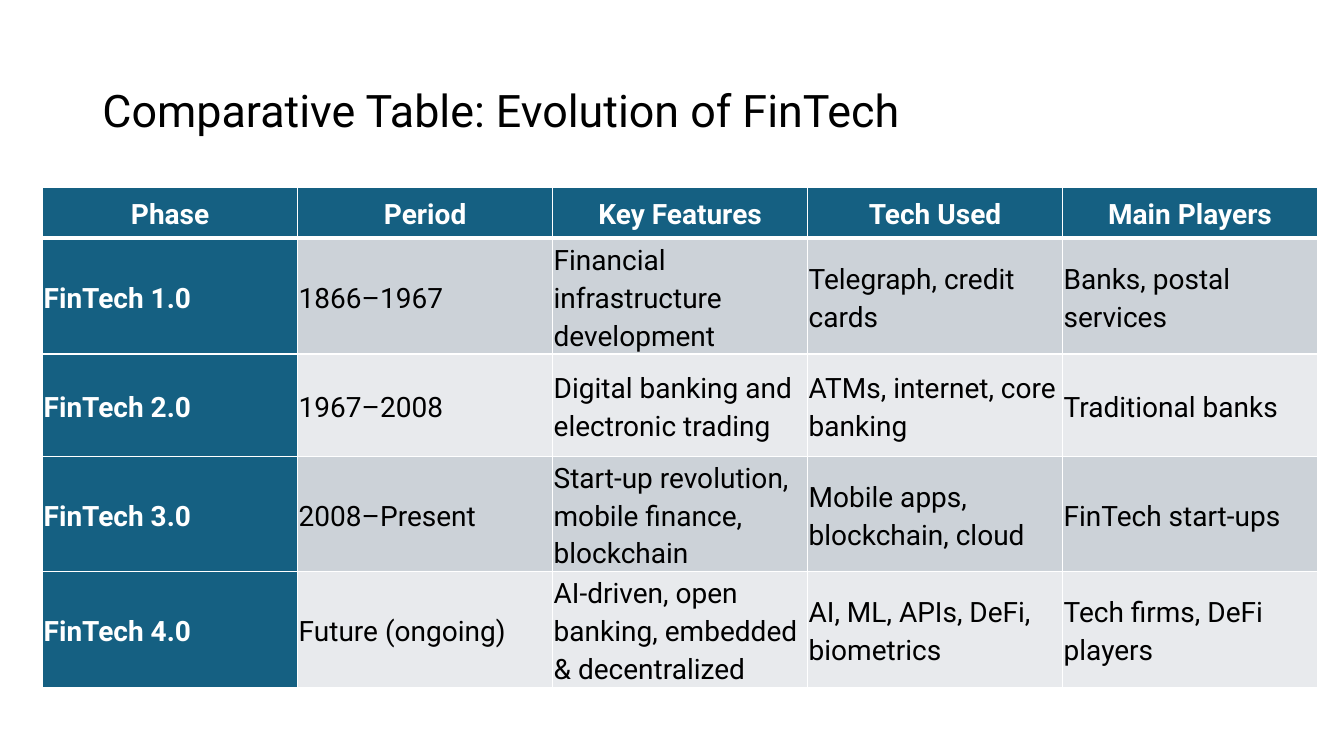
from dataclasses import dataclass

from lxml.etree import SubElement
from pptx import Presentation
from pptx.dml.color import RGBColor
from pptx.enum.text import MSO_ANCHOR, MSO_AUTO_SIZE, PP_ALIGN
from pptx.oxml.ns import qn
from pptx.util import Pt


@dataclass(frozen=True)
class Theme:
    font: str = "Roboto"
    title_size: int = 32
    table_size: int = 20
    black: str = "000000"
    white: str = "FFFFFF"
    accent: str = "156082"
    bands: tuple = ("CCD2D8", "E8EAED")


theme = Theme()


def style_paragraph(paragraph, size, color, bold, alignment, line_spacing):
    paragraph.font.name = theme.font
    paragraph.font.size = Pt(size)
    paragraph.font.bold = bold
    paragraph.font.color.rgb = RGBColor.from_string(color)
    paragraph.alignment = alignment
    paragraph.line_spacing = line_spacing


def add_border(cell, side, width):
    properties = cell._tc.get_or_add_tcPr()
    line = SubElement(properties, qn(f"a:ln{side}"), w=str(Pt(width)))
    fill = SubElement(line, qn("a:solidFill"))
    SubElement(fill, qn("a:srgbClr"), val=theme.white)


presentation = Presentation()
presentation.slide_width = Pt(960)
presentation.slide_height = Pt(540)
slide = presentation.slides.add_slide(presentation.slide_layouts[5])

title = slide.shapes.title
title.left, title.top, title.width, title.height = Pt(66), Pt(28.75), Pt(828), Pt(104.4)
title.text_frame.text = "Comparative Table: Evolution of FinTech"
title.text_frame.auto_size = MSO_AUTO_SIZE.NONE
title.text_frame.vertical_anchor = MSO_ANCHOR.MIDDLE
style_paragraph(title.text_frame.paragraphs[0], theme.title_size, theme.black,
                False, PP_ALIGN.LEFT, 0.9)

phases = [
    ("Phase", "Period", "Key Features", "Tech Used", "Main Players"),
    ("FinTech 1.0", "1866–1967", "Financial infrastructure development",
     "Telegraph, credit cards", "Banks, postal services"),
    ("FinTech 2.0", "1967–2008", "Digital banking and electronic trading",
     "ATMs, internet, core banking", "Traditional banks"),
    ("FinTech 3.0", "2008–Present", "Start-up revolution, mobile finance, blockchain",
     "Mobile apps, blockchain, cloud", "FinTech start-ups"),
    ("FinTech 4.0", "Future (ongoing)", "AI-driven, open banking, embedded & decentralized",
     "AI, ML, APIs, DeFi, biometrics", "Tech firms, DeFi players"),
]
header_height, body_height, column_width = 36.75, 73, 182.15
row_count, column_count = len(phases), len(phases[0])
table = slide.shapes.add_table(
    row_count, column_count, Pt(30.5), Pt(133.5), Pt(column_width * column_count),
    Pt(header_height + body_height * (row_count - 1))).table
for column in table.columns:
    column.width = Pt(column_width)

for row_index, phase in enumerate(phases):
    is_header = row_index == 0
    table.rows[row_index].height = Pt(header_height if is_header else body_height)
    for column_index, text in enumerate(phase):
        emphasized = is_header or column_index == 0
        cell = table.cell(row_index, column_index)
        cell.text = text
        cell.vertical_anchor = MSO_ANCHOR.MIDDLE
        cell.margin_left = cell.margin_right = Pt(0.75)
        cell.margin_top = cell.margin_bottom = Pt(0.75)
        add_border(cell, "L", 1)
        add_border(cell, "R", 1)
        add_border(cell, "T", 3 if row_index == 1 else 1)
        add_border(cell, "B", 3 if is_header else 1)
        cell.fill.solid()
        cell.fill.fore_color.rgb = RGBColor.from_string(
            theme.accent if emphasized else theme.bands[(row_index - 1) % 2])
        paragraph = cell.text_frame.paragraphs[0]
        style_paragraph(paragraph, theme.table_size,
                        theme.white if emphasized else theme.black, emphasized,
                        PP_ALIGN.CENTER if is_header else PP_ALIGN.LEFT, 1.15)
        paragraph.space_after = Pt(8)

presentation.save("out.pptx")
